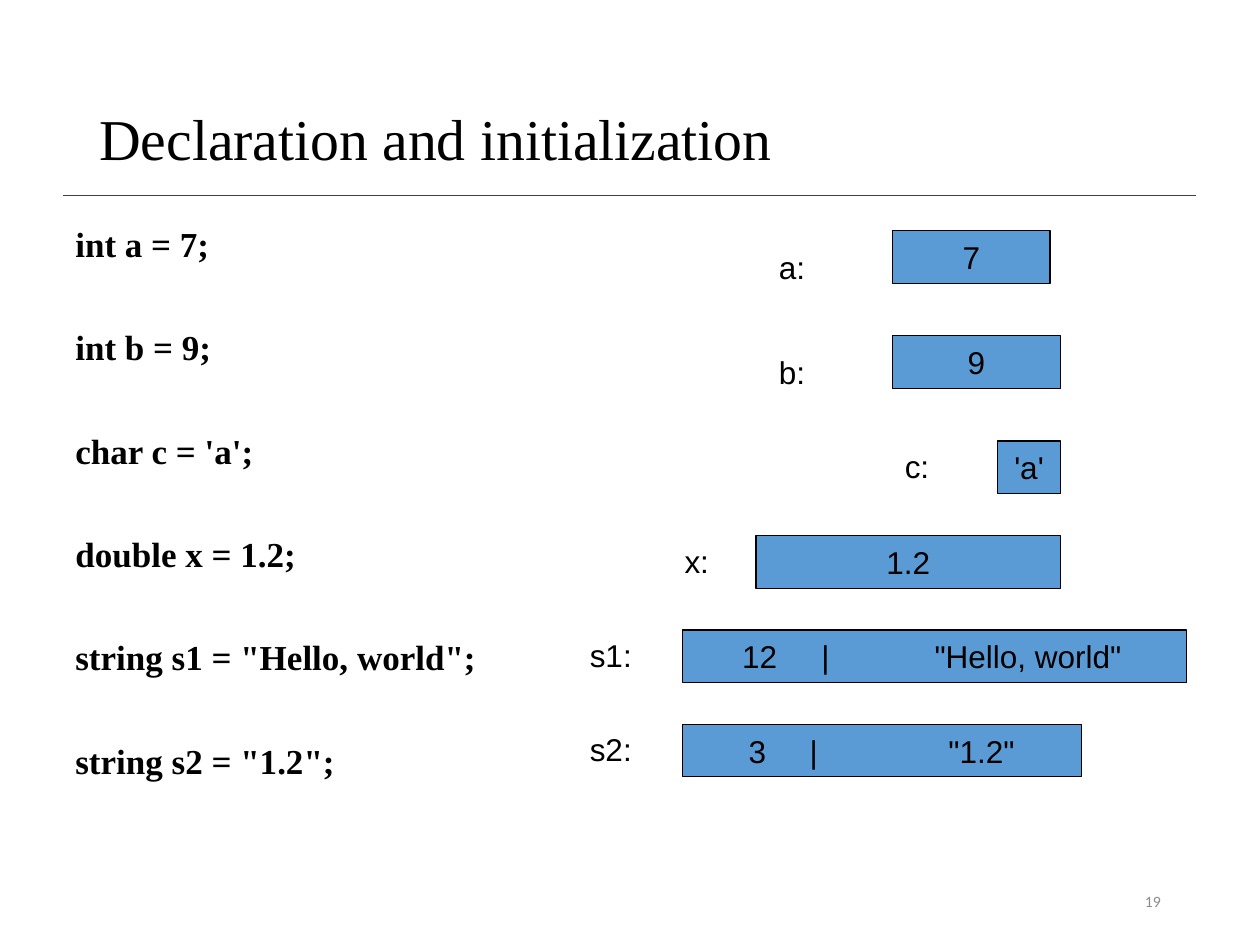
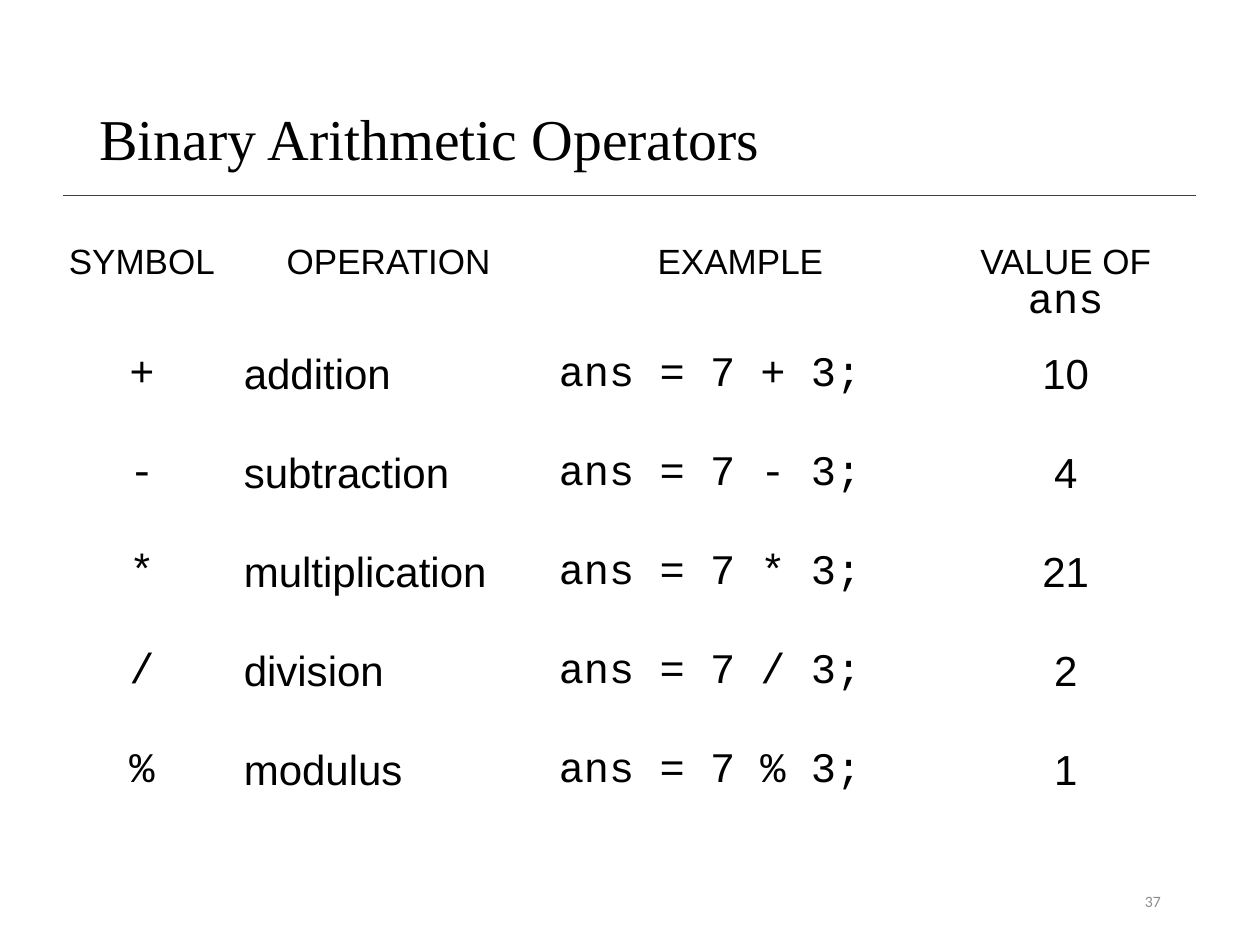
"""Build two slides on C++ variables and arithmetic operators."""
import pptx
import pptx.dml.color
import pptx.enum.shapes
import pptx.enum.text
import pptx.util
from lxml import etree

Cm, Pt = pptx.util.Cm, pptx.util.Pt
ALIGN = pptx.enum.text.PP_ALIGN
MIDDLE = pptx.enum.text.MSO_ANCHOR.MIDDLE
RECT = pptx.enum.shapes.MSO_SHAPE.RECTANGLE
LINE = pptx.enum.shapes.MSO_CONNECTOR.STRAIGHT
SANS, SERIF, MONO, SMALL = "Arial", "Times New Roman", "Courier New", "Calibri"
BLACK, BLUE, GREY, RULE = "000000", "5B9BD5", "8C8C8C", "404040"

CODE = ["int a = 7;", "int b = 9;", "char c = 'a';", "double x = 1.2;",
        'string s1 = "Hello, world";', 'string s2 = "1.2";']
# name, name left, name top, box left, box top, box width, parts, part offsets
VARS = [
    ("a:", 15.45, 4.87, 17.99, 4.65, 3.18, ["7"], []),
    ("b:", 15.45, 6.99, 17.99, 6.77, 3.39, ["9"], []),
    ("c:", 17.99, 8.89, 20.11, 8.89, 1.27, ["'a'"], []),
    ("x:", 13.55, 10.8, 15.24, 10.8, 6.14, ["1.2"], []),
    ("s1:", 11.64, 12.7, 13.76, 12.7, 10.16,
     ["12", "|", '"Hello, world"'], [1.2, 2.8, 5.08]),
    ("s2:", 11.64, 14.6, 13.76, 14.6, 8.04,
     ["3", "|", '"1.2"'], [1.33, 2.56, 5.36]),
]
HEADS = ["SYMBOL", "OPERATION", "EXAMPLE", "VALUE OF "]
MATHS = [("+", "addition", "10"), ("-", "subtraction", "4"),
         ("*", "multiplication", "21"), ("/", "division", "2"),
         ("%", "modulus", "1")]
WIDTHS = [3.6, 6.35, 7.83, 5.29]
HEAD_H, ROW_H = 2.08, 2.0


def paint(code):
    return pptx.dml.color.RGBColor.from_string(code)


def write(par, text, size, face, color=BLACK, bold=False):
    run = par.add_run()
    run.text = text
    run.font.size, run.font.name, run.font.bold = Pt(size), face, bold
    run.font.color.rgb = paint(color)


def add_box(slide, left, top, width, height):
    frame = slide.shapes.add_textbox(
        Cm(left), Cm(top), Cm(width), Cm(height)).text_frame
    frame.word_wrap = True
    return frame


def add_page(deck, title, number):
    slide = deck.slides.add_slide(deck.slide_layouts[6])
    rule = slide.shapes.add_connector(
        LINE, Cm(1.27), Cm(3.94), Cm(24.1), Cm(3.94))
    rule.line.color.rgb, rule.line.width = paint(RULE), Pt(1)
    etree.SubElement(rule._element.spPr, pptx.oxml.ns.qn("a:effectLst"))
    head = add_box(slide, 1.75, 1.02, 21.9, 3.68)
    foot = add_box(slide, 17.93, 17.65, 5.72, 1.02)
    head.vertical_anchor = foot.vertical_anchor = MIDDLE
    head.paragraphs[0].line_spacing = 0.9
    write(head.paragraphs[0], title, 33, SERIF)
    foot.paragraphs[0].alignment = ALIGN.RIGHT
    write(foot.paragraphs[0], number, 9, SMALL, GREY)
    return slide


def add_code(slide):
    frame = add_box(slide, 1.27, 4.45, 9.96, 12.5)
    for i, text in enumerate(CODE):
        par = frame.add_paragraph() if i else frame.paragraphs[0]
        par.line_spacing = 0.9
        par.space_before = Pt(37.5 if i else 0)
        write(par, text, 20, SERIF, bold=True)


def set_tabs(par, stops):
    tabs = etree.SubElement(
        par._p.get_or_add_pPr(), pptx.oxml.ns.qn("a:tabLst"))
    for stop in stops:
        etree.SubElement(tabs, pptx.oxml.ns.qn("a:tab"),
                         pos=str(int(Cm(stop))), algn="l")


def add_var(slide, name, name_x, name_y, left, top, width, parts, stops):
    box = slide.shapes.add_shape(
        RECT, Cm(left), Cm(top), Cm(width), Cm(1.06))
    box.shadow.inherit = False
    box.fill.solid()
    box.fill.fore_color.rgb = paint(BLUE)
    box.line.color.rgb, box.line.width = paint(BLACK), Pt(0.75)
    frame = box.text_frame
    frame.vertical_anchor = MIDDLE
    frame.word_wrap = bool(stops)
    par = frame.paragraphs[0]
    par.alignment = ALIGN.LEFT if stops else ALIGN.CENTER
    if stops:
        frame.margin_left, frame.margin_right = Cm(stops[0]), 0
        set_tabs(par, [stop - stops[0] for stop in stops[1:]])
    write(par, "\t".join(parts), 18, SANS)
    label = add_box(slide, name_x, name_y, 1.7, 1.02)
    write(label.paragraphs[0], name, 18, SANS)


def add_grid(slide):
    rows = [HEADS] + [(sign, name, f"ans = 7 {sign} 3;", value)
                      for sign, name, value in MATHS]
    table = slide.shapes.add_table(
        len(rows), len(WIDTHS), Cm(1.06), Cm(4.87), Cm(sum(WIDTHS)),
        Cm(HEAD_H + ROW_H * len(MATHS))).table
    table.first_row = table.horz_banding = False
    for col, width in zip(table.columns, WIDTHS):
        col.width = Cm(width)
    for r, row in enumerate(rows):
        table.rows[r].height = Cm(ROW_H if r else HEAD_H)
        for c, text in enumerate(row):
            cell = table.cell(r, c)
            cell.fill.background()
            par = cell.text_frame.paragraphs[0]
            mid = r == 0 or c in (0, 3)
            par.alignment = ALIGN.CENTER if mid else ALIGN.LEFT
            if r == 0:
                par.line_spacing = 0.85
            face = MONO if r and c in (0, 2) else SANS
            write(par, text, 24 if r else 20, face)
    write(table.cell(0, 3).text_frame.paragraphs[0], "ans", 24, MONO)


def main():
    deck = pptx.Presentation()
    deck.slide_width, deck.slide_height = Cm(25.4), Cm(19.05)
    first = add_page(deck, "Declaration and initialization", "19")
    add_code(first)
    for var in VARS:
        add_var(first, *var)
    add_grid(add_page(deck, "Binary Arithmetic Operators", "37"))
    deck.save("out.pptx")


if __name__ == "__main__":
    main()
